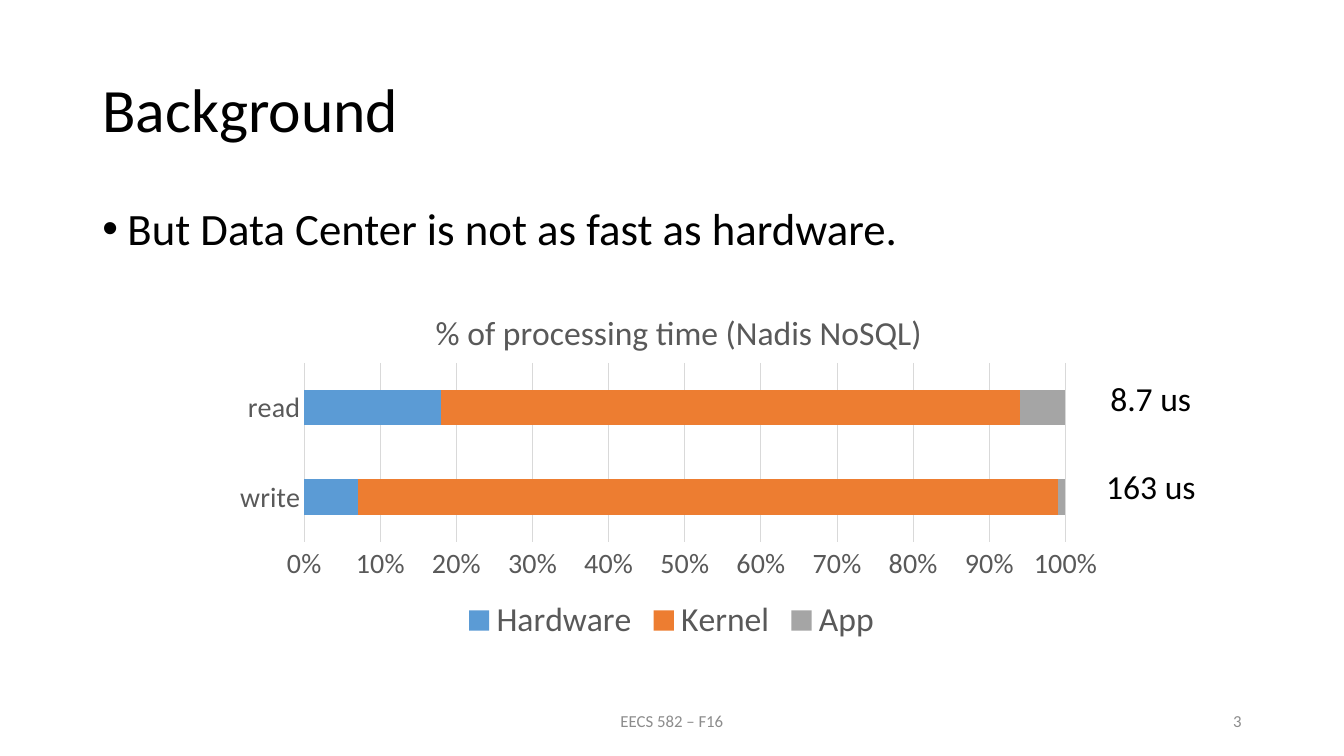
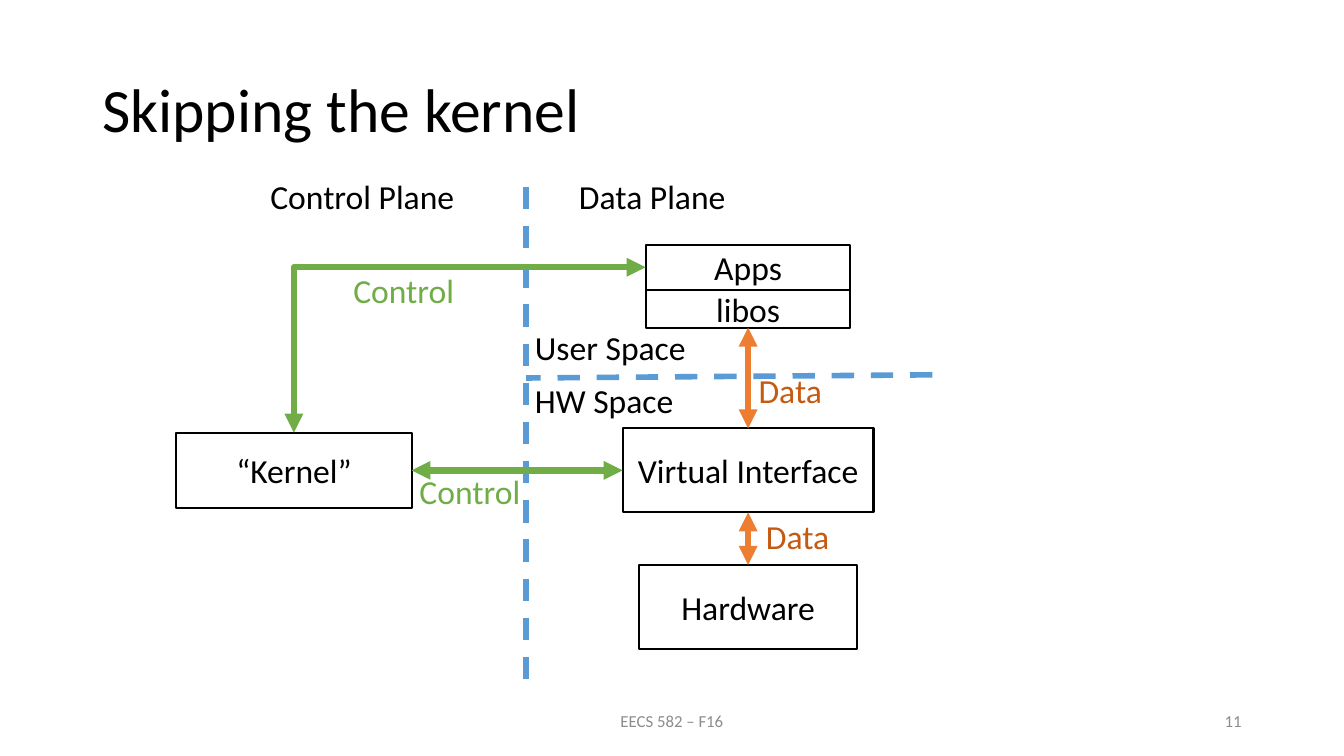
from dataclasses import dataclass
from typing import Any

from lxml import etree
from pptx import Presentation
from pptx.chart.data import CategoryChartData
from pptx.dml.color import RGBColor
from pptx.enum.chart import XL_CHART_TYPE, XL_LEGEND_POSITION, XL_TICK_MARK
from pptx.enum.dml import MSO_LINE
from pptx.enum.shapes import MSO_CONNECTOR, MSO_SHAPE
from pptx.enum.text import MSO_ANCHOR, MSO_AUTO_SIZE, PP_ALIGN
from pptx.oxml.ns import qn
from pptx.util import Emu, Pt

EMU_PER_PX = 9525
FONT = "Calibri"
BLACK, WHITE, GRAY, FOOTER_GRAY, GRID = "000000", "FFFFFF", "595959", "8C8C8C", "D9D9D9"
BLUE, ORANGE, SILVER, GREEN, RUST = "5B9BD5", "ED7D31", "A5A5A5", "70AD47", "C55A11"
LEFT, CENTER, RIGHT = PP_ALIGN.LEFT, PP_ALIGN.CENTER, PP_ALIGN.RIGHT
TOP, MIDDLE = MSO_ANCHOR.TOP, MSO_ANCHOR.MIDDLE
FIT, FIXED = MSO_AUTO_SIZE.SHAPE_TO_FIT_TEXT, MSO_AUTO_SIZE.NONE
STRAIGHT, ELBOW = MSO_CONNECTOR.STRAIGHT, MSO_CONNECTOR.ELBOW
RECTANGLE, DASH = MSO_SHAPE.RECTANGLE, MSO_LINE.DASH
STACKED_BAR, LEGEND_BOTTOM = XL_CHART_TYPE.BAR_STACKED_100, XL_LEGEND_POSITION.BOTTOM
NO_TICK = XL_TICK_MARK.NONE
SIDE_TOP, SIDE_LEFT, SIDE_BOTTOM, SIDE_RIGHT = range(4)


@dataclass(frozen=True)
class Style:
    size: int
    color: str = BLACK
    align: Any = LEFT
    anchor: Any = MIDDLE
    wrap: bool = True
    spacing: float = 1.0
    before: int = 0


@dataclass(frozen=True)
class Text:
    words: str
    left: int
    top: int
    width: int
    height: int
    style: Style


@dataclass(frozen=True)
class Box:
    words: str
    left: int
    top: int
    width: int
    height: int


@dataclass(frozen=True)
class Arrow:
    start: str
    start_side: int
    end: str
    end_side: int
    color: str
    kind: Any = STRAIGHT


@dataclass(frozen=True)
class Divider:
    x1: int
    y1: int
    x2: int
    y2: int


TITLE = Style(44, spacing=0.9)
BODY = Style(32, anchor=TOP, spacing=0.9, before=10)
COURSE = Style(12, FOOTER_GRAY, CENTER)
NUMBER = Style(12, FOOTER_GRAY, RIGHT)
BOX_TEXT = Style(24, align=CENTER)
LABEL = Style(24, anchor=TOP, wrap=False)
DATA_LABEL = Style(24, RUST, anchor=TOP, wrap=False)
CONTROL_LABEL = Style(24, GREEN, anchor=TOP, wrap=False)

LATENCIES = (
    Text("8.7 us", 1048, 355, 97, 48, LABEL),
    Text("163 us", 1044, 439, 106, 48, LABEL),
)
SHARES = (("Hardware", (7, 18), BLUE), ("Kernel", (92, 76), ORANGE), ("App", (1, 6), SILVER))

BOXES = (
    Box("Apps", 615, 233, 195, 43),
    Box("“Kernel”", 168, 412, 224, 72),
    Box("Hardware", 609, 538, 207, 80),
    Box("libos", 615, 276, 195, 36),
    Box("Virtual Interface", 593, 408, 239, 80),
)
DIVIDERS = (Divider(501, 178, 501, 660), Divider(888, 357, 501, 360))
ARROWS = (
    Arrow("libos", SIDE_BOTTOM, "Virtual Interface", SIDE_TOP, ORANGE),
    Arrow("Virtual Interface", SIDE_BOTTOM, "Hardware", SIDE_TOP, ORANGE),
    Arrow("“Kernel”", SIDE_RIGHT, "Virtual Interface", SIDE_LEFT, GREEN),
    Arrow("Apps", SIDE_LEFT, "“Kernel”", SIDE_TOP, GREEN, ELBOW),
)
PLANE_LABELS = (
    Text("Control Plane", 248, 163, 196, 48, LABEL),
    Text("Data Plane", 542, 163, 160, 48, LABEL),
    Text("User Space", 500, 307, 164, 48, LABEL),
    Text("HW Space", 500, 357, 153, 48, LABEL),
)
FLOW_LABELS = (
    Text("Data", 713, 348, 81, 48, DATA_LABEL),
    Text("Data", 720, 487, 81, 48, DATA_LABEL),
    Text("Control", 390, 444, 116, 48, CONTROL_LABEL),
    Text("Control", 327, 252, 116, 48, CONTROL_LABEL),
)


def px(*lengths: int) -> list[Emu]:
    return [Emu(length * EMU_PER_PX) for length in lengths]


def rgb(color: str) -> RGBColor:
    return RGBColor.from_string(color)


def apply(target: Any, values: dict[str, Any]) -> None:
    for name, value in values.items():
        setattr(target, name, value)


def set_font(font: Any, size: int, color: str) -> None:
    apply(font, {"name": FONT, "size": Pt(size), "bold": False})
    font.color.rgb = rgb(color)


def set_line(line: Any, color: str, width: float) -> None:
    line.color.rgb = rgb(color)
    line.width = Pt(width)


def write(frame: Any, words: str, style: Style) -> Any:
    apply(frame, {
        "word_wrap": style.wrap,
        "vertical_anchor": style.anchor,
        "auto_size": FIXED if style.wrap else FIT,
    })
    paragraph = frame.paragraphs[0]
    apply(paragraph, {
        "alignment": style.align,
        "line_spacing": style.spacing,
        "space_before": Pt(style.before),
    })
    run = paragraph.add_run()
    run.text = words
    set_font(run.font, style.size, style.color)
    return paragraph


def add_text(slide: Any, text: Text) -> Any:
    area = slide.shapes.add_textbox(*px(text.left, text.top, text.width, text.height))
    return write(area.text_frame, text.words, text.style)


def add_bullet(paragraph: Any) -> None:
    indent = px(24)[0]
    properties = paragraph._p.get_or_add_pPr()
    properties.set("marL", str(indent))
    properties.set("indent", str(-indent))
    etree.SubElement(properties, qn("a:buFont"), typeface="Arial")
    etree.SubElement(properties, qn("a:buChar"), char="•")


def add_box(slide: Any, box: Box) -> Any:
    rectangle = slide.shapes.add_shape(
        RECTANGLE, *px(box.left, box.top, box.width, box.height))
    rectangle.shadow.inherit = False
    rectangle.fill.solid()
    rectangle.fill.fore_color.rgb = rgb(WHITE)
    set_line(rectangle.line, BLACK, 1.5)
    write(rectangle.text_frame, box.words, BOX_TEXT)
    return rectangle


def add_line(slide: Any, kind: Any, ends: list[Emu], color: str, width: float) -> Any:
    connector = slide.shapes.add_connector(kind, *ends)
    set_line(connector.line, color, width)
    etree.SubElement(connector._element.spPr, qn("a:effectLst"))
    return connector


def add_divider(slide: Any, divider: Divider) -> None:
    ends = px(divider.x1, divider.y1, divider.x2, divider.y2)
    add_line(slide, STRAIGHT, ends, BLUE, 4).line.dash_style = DASH


def add_arrow(slide: Any, arrow: Arrow, boxes: dict[str, Any]) -> None:
    connector = add_line(slide, arrow.kind, px(0, 0, 0, 0), arrow.color, 4.5)
    connector.begin_connect(boxes[arrow.start], arrow.start_side)
    connector.end_connect(boxes[arrow.end], arrow.end_side)
    properties = connector._element.spPr
    if arrow.kind == ELBOW:
        properties.find(qn("a:prstGeom")).set("prst", "bentConnector2")
    outline = properties.find(qn("a:ln"))
    for tip in ("a:headEnd", "a:tailEnd"):
        etree.SubElement(outline, qn(tip), type="triangle")


def place(element: Any, position: int, **values: Any) -> None:
    for old in element.findall(qn("c:layout")):
        element.remove(old)
    layout = etree.Element(qn("c:layout"))
    manual = etree.SubElement(layout, qn("c:manualLayout"))
    for name, value in values.items():
        etree.SubElement(manual, qn(f"c:{name}"), val=str(value))
    element.insert(position, layout)


def add_processing_chart(slide: Any) -> None:
    data = CategoryChartData()
    data.categories = ["write", "read"]
    for name, values, _ in SHARES:
        data.add_series(name, values)
    chart = slide.shapes.add_chart(STACKED_BAR, *px(213, 269, 853, 348), data).chart
    set_font(chart.font, 20, BLACK)

    chart.has_title = True
    heading = chart.chart_title
    heading.include_in_layout = False
    run = heading.text_frame.paragraphs[0].add_run()
    run.text = "% of processing time (Nadis NoSQL)"
    set_font(run.font, 24, GRAY)
    place(heading._element, 1, xMode="edge", yMode="edge", x=0.23, y=0.06)

    chart.has_legend = True
    apply(chart.legend, {"position": LEGEND_BOTTOM, "include_in_layout": False})
    set_font(chart.legend.font, 24, GRAY)

    plot = chart.plots[0]
    apply(plot, {"gap_width": 150, "overlap": 100, "vary_by_categories": False})
    for series, (_, _, color) in zip(plot.series, SHARES):
        series.format.fill.solid()
        series.format.fill.fore_color.rgb = rgb(color)

    for axis in (chart.category_axis, chart.value_axis):
        apply(axis, {"major_tick_mark": NO_TICK, "minor_tick_mark": NO_TICK})
        set_font(axis.tick_labels.font, 20, GRAY)
    set_line(chart.category_axis.format.line, GRID, 0.75)
    percentages = chart.value_axis
    percentages.format.line.fill.background()
    percentages.has_major_gridlines = True
    set_line(percentages.major_gridlines.format.line, GRID, 0.75)
    apply(percentages.tick_labels, {"number_format": "0%", "number_format_is_linked": False})
    place(chart._chartSpace.chart.plotArea, 0, layoutTarget="inner",
          xMode="edge", yMode="edge", x=0.09, y=0.22, w=0.85, h=0.49)


def add_slide(deck: Any, title: str, number: int) -> Any:
    slide = deck.slides.add_slide(deck.slide_layouts[6])
    for text in (
        Text(title, 88, 38, 1104, 139, TITLE),
        Text("EECS 582 – F16", 424, 667, 432, 38, COURSE),
        Text(str(number), 904, 667, 288, 38, NUMBER),
    ):
        add_text(slide, text)
    return slide


def build_background(deck: Any) -> None:
    slide = add_slide(deck, "Background", 3)
    claim = "But Data Center is not as fast as hardware."
    add_bullet(add_text(slide, Text(claim, 88, 192, 1104, 457, BODY)))
    add_processing_chart(slide)
    for latency in LATENCIES:
        add_text(slide, latency)


def build_skipping_kernel(deck: Any) -> None:
    slide = add_slide(deck, "Skipping the kernel", 11)
    boxes = {box.words: add_box(slide, box) for box in BOXES}
    for divider in DIVIDERS:
        add_divider(slide, divider)
    for label in PLANE_LABELS:
        add_text(slide, label)
    for arrow in ARROWS:
        add_arrow(slide, arrow, boxes)
    for label in FLOW_LABELS:
        add_text(slide, label)


def main() -> None:
    deck = Presentation()
    deck.slide_width, deck.slide_height = px(1280, 720)
    build_background(deck)
    build_skipping_kernel(deck)
    deck.save("out.pptx")


if __name__ == "__main__":
    main()
